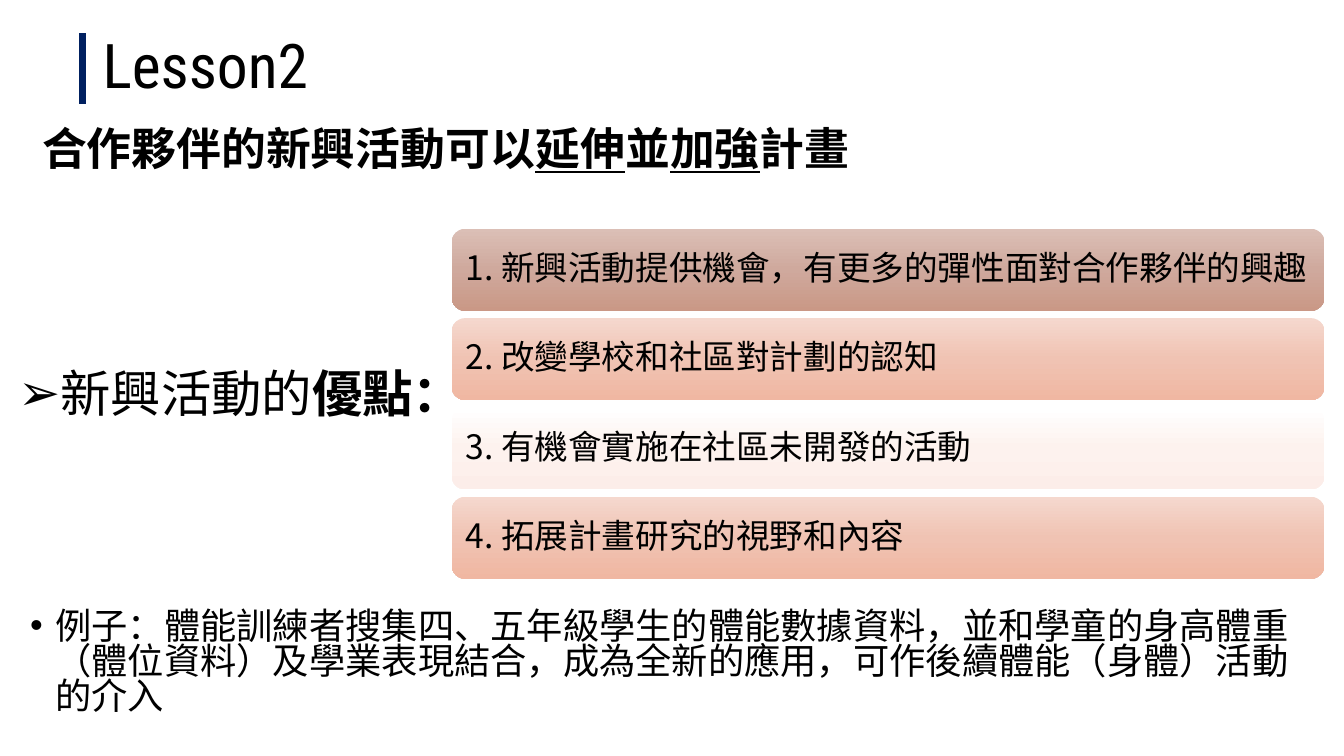
from copy import deepcopy
from pptx import Presentation
from pptx.dml.color import RGBColor
from pptx.enum.shapes import MSO_CONNECTOR, MSO_SHAPE
from pptx.enum.text import MSO_ANCHOR, PP_ALIGN
from pptx.oxml.ns import qn
from pptx.util import Pt
from lxml import etree

COLORS = {
    "text": "000000",
    "accent": "002060",
    "brown": ["DBBFB6", "CFA99D", "CA9886"],
    "salmon": ["F5D8CE", "F0C3B3", "F0B7A2"],
    "pale": ["FFFFFF", "FDF2EE", "FCEDE9"],
}
CJK_FONT = "Noto Sans CJK SC"
LATIN_FONT = "Roboto Condensed"


def write_text(shape, runs, size, font=CJK_FONT, spacing=0.9, before=0, bullet=None, anchor=MSO_ANCHOR.TOP):
    text_frame = shape.text_frame
    text_frame.word_wrap = True
    text_frame.vertical_anchor = anchor
    paragraph = text_frame.paragraphs[0]
    paragraph.alignment = PP_ALIGN.LEFT
    paragraph.line_spacing = spacing
    paragraph.space_before = Pt(before)
    if bullet:
        properties = paragraph._p.get_or_add_pPr()
        properties.set("marL", str(Pt(18)))
        properties.set("indent", str(-Pt(18)))
        etree.SubElement(properties, qn("a:buFont")).set("typeface", "Arial")
        etree.SubElement(properties, qn("a:buChar")).set("char", bullet)
    for text, bold, underline in runs:
        run = paragraph.add_run()
        run.text = text
        run.font.size = Pt(size)
        run.font.name = font
        run.font.bold = bold
        run.font.underline = underline
        run.font.color.rgb = RGBColor.from_string(COLORS["text"])
        etree.SubElement(run._r.get_or_add_rPr(), qn("a:ea")).set("typeface", font)


def add_text(left, top, width, height, runs, size, **options):
    box = slide.shapes.add_textbox(Pt(left), Pt(top), Pt(width), Pt(height))
    write_text(box, runs, size, **options)


presentation = Presentation()
presentation.slide_width = Pt(960)
presentation.slide_height = Pt(540)
slide = presentation.slides.add_slide(presentation.slide_layouts[6])

add_text(5.8, 260, 301.7, 51, [("新興活動的", False, False), ("優點：", True, False)], 36,
         before=10, bullet="➢")
add_text(66.2, 23.8, 828, 50.4, [("Lesson2", False, False)], 44,
         font=LATIN_FONT, anchor=MSO_ANCHOR.MIDDLE)

title_bar = slide.shapes.add_connector(MSO_CONNECTOR.STRAIGHT, Pt(59), Pt(23.8), Pt(59), Pt(74.2))
title_bar.line.color.rgb = RGBColor.from_string(COLORS["accent"])
title_bar.line.width = Pt(4.5)
etree.SubElement(title_bar._element.spPr, qn("a:effectLst"))

add_text(23, 87.1, 732.2, 59.8, [
    ("合作夥伴的新興活動可以", True, False),
    ("延伸", True, True),
    ("並", True, False),
    ("加強", True, True),
    ("計畫", True, False),
], 32, before=10)

advantages = [
    ("1. 新興活動提供機會，有更多的彈性面對合作夥伴的興趣", "brown"),
    ("2. 改變學校和社區對計劃的認知", "salmon"),
    ("3. 有機會實施在社區未開發的活動", "pale"),
    ("4. 拓展計畫研究的視野和內容", "salmon"),
]
for index, (text, color) in enumerate(advantages):
    bar = slide.shapes.add_shape(MSO_SHAPE.ROUNDED_RECTANGLE, Pt(322.6), Pt(163.4 + 63.8 * index),
                                 Pt(623.5), Pt(58.6))
    bar.shadow.inherit = False
    bar.line.fill.background()
    bar.fill.gradient()
    bar.fill.gradient_angle = 270
    stop_list = bar._element.spPr.find(qn("a:gradFill")).find(qn("a:gsLst"))
    stop_list.insert(1, deepcopy(stop_list[0]))
    for stop, position, value in zip(bar.fill.gradient_stops, (0, 0.5, 1), COLORS[color]):
        stop.position = position
        stop.color.rgb = RGBColor.from_string(value)
    write_text(bar, [(text, False, False)], 24, anchor=MSO_ANCHOR.MIDDLE)
    bar.text_frame.margin_top = bar.text_frame.margin_bottom = Pt(7.2)

example = "例子：體能訓練者搜集四、五年級學生的體能數據資料，並和學童的身高體重（體位資料）及學業表現結合，成為全新的應用，可作後續體能（身體）活動的介入"
add_text(14.4, 433.4, 923, 82.8, [(example, False, False)], 25.9, spacing=0.8, before=10, bullet="•")

presentation.save("out.pptx")
